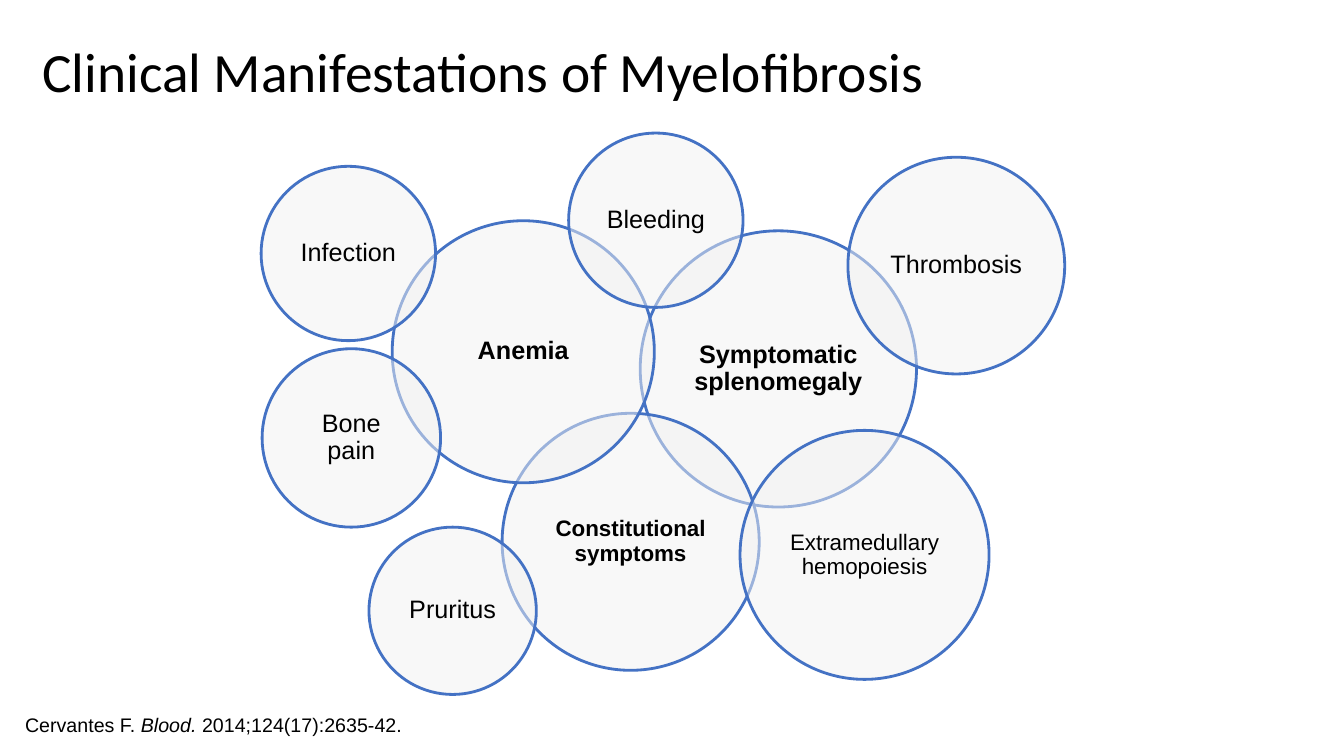
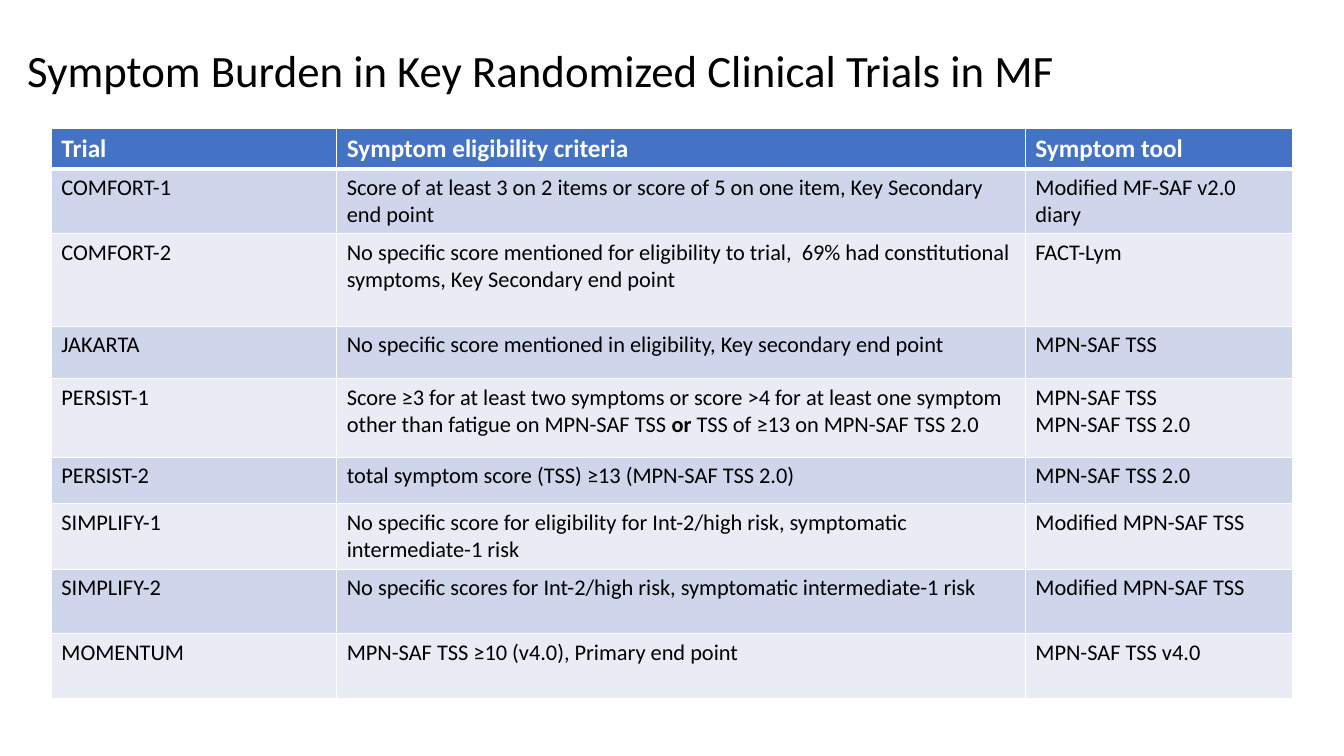
from lxml import etree
from pptx import Presentation
from pptx.dml.color import RGBColor
from pptx.enum import shapes, text
from pptx.oxml import ns
from pptx.util import Inches, Pt

BLACK = RGBColor(0x00, 0x00, 0x00)
WHITE = RGBColor(0xFF, 0xFF, 0xFF)
BLUE = RGBColor(0x44, 0x72, 0xC4)
LIGHT_GREY = RGBColor(0xF2, 0xF2, 0xF2)
ROW_FILLS = (RGBColor(0xCF, 0xD5, 0xEA), RGBColor(0xE9, 0xEB, 0xF5))
TITLE_FONT = TABLE_FONT = "Calibri"
DIAGRAM_FONT = "Arial"

# label, left, top, diameter, text size, bold; from back to front
SYMPTOMS = [
    ("Symptomatic splenomegaly", 6.35, 2.29, 2.74, 18, True),
    ("Constitutional symptoms", 4.98, 4.1, 2.55, 16, True),
    ("Anemia", 3.89, 2.19, 2.6, 18, True),
    ("Thrombosis", 8.41, 1.56, 2.15, 18, False),
    ("Bleeding", 5.64, 1.32, 1.73, 18, False),
    ("Infection", 2.59, 1.65, 1.73, 18, False),
    ("Bone pain", 2.6, 3.46, 1.77, 18, False),
    ("Pruritus", 3.66, 5.23, 1.66, 18, False),
    ("Extramedullary hemopoiesis", 7.34, 4.27, 2.47, 16, False),
]

COLUMN_WIDTHS = (2.83, 6.83, 2.65)
ROW_HEIGHTS = (0.4, 0.64, 0.92, 0.52, 0.78, 0.46, 0.65, 0.64, 0.64)
PERSIST_CRITERIA = (
    "Score ≥3 for at least two symptoms or score >4 for at least one symptom "
    "other than fatigue on MPN-SAF TSS **or** TSS of ≥13 on MPN-SAF TSS 2.0"
)
# Bold words stand between double asterisks.
TRIALS = [
    ("Trial", "Symptom eligibility criteria", "Symptom tool"),
    ("COMFORT-1",
     "Score of at least 3 on 2 items or score of 5 on one item, Key Secondary end point",
     "Modified MF-SAF v2.0 diary"),
    ("COMFORT-2",
     "No specific score mentioned for eligibility to trial,  69% had constitutional "
     "symptoms, Key Secondary end point",
     "FACT-Lym"),
    ("JAKARTA",
     "No specific score mentioned in eligibility, Key secondary end point",
     "MPN-SAF TSS"),
    ("PERSIST-1", PERSIST_CRITERIA, "MPN-SAF TSS\nMPN-SAF TSS 2.0"),
    ("PERSIST-2", "total symptom score (TSS) ≥13 (MPN-SAF TSS 2.0)", "MPN-SAF TSS 2.0"),
    ("SIMPLIFY-1",
     "No specific score for eligibility for Int-2/high risk, symptomatic intermediate-1 risk",
     "Modified MPN-SAF TSS"),
    ("SIMPLIFY-2",
     "No specific scores for Int-2/high risk, symptomatic intermediate-1 risk",
     "Modified MPN-SAF TSS"),
    ("MOMENTUM", "MPN-SAF TSS ≥10 (v4.0), Primary end point", "MPN-SAF TSS v4.0"),
]


def set_font(paragraph, name, size, color=BLACK, bold=None):
    font = paragraph.font
    font.name = name
    font.size = Pt(size)
    font.bold = bold
    font.color.rgb = color


def add_titled_slide(presentation, title_text, left, top, height, size):
    slide = presentation.slides.add_slide(presentation.slide_layouts[5])
    title = slide.shapes.title
    title.left, title.top = Inches(left), Inches(top)
    title.width, title.height = Inches(11.5), Inches(height)
    frame = title.text_frame
    frame.text = title_text
    frame.auto_size = text.MSO_AUTO_SIZE.NONE
    frame.vertical_anchor = text.MSO_ANCHOR.MIDDLE
    paragraph = frame.paragraphs[0]
    paragraph.alignment = text.PP_ALIGN.LEFT
    paragraph.line_spacing = 0.9
    set_font(paragraph, TITLE_FONT, size)
    return slide


def add_circle(slide, label, left, top, diameter, size, bold):
    circle = slide.shapes.add_shape(
        shapes.MSO_SHAPE.OVAL, Inches(left), Inches(top), Inches(diameter), Inches(diameter))
    circle.shadow.inherit = False
    circle.fill.solid()
    circle.fill.fore_color.rgb = LIGHT_GREY
    color = circle.fill._xPr.find(".//" + ns.qn("a:srgbClr"))
    etree.SubElement(color, ns.qn("a:alpha"), val="50000")
    circle.line.color.rgb = BLUE
    circle.line.width = Pt(2)
    frame = circle.text_frame
    frame.text = label
    frame.word_wrap = True
    frame.margin_left = frame.margin_right = Inches(0.09)
    frame.vertical_anchor = text.MSO_ANCHOR.MIDDLE
    paragraph = frame.paragraphs[0]
    paragraph.alignment = text.PP_ALIGN.CENTER
    paragraph.line_spacing = 0.9
    set_font(paragraph, DIAGRAM_FONT, size, bold=bold)


def add_citation(slide, authors, journal, reference):
    box = slide.shapes.add_textbox(Inches(0.15), Inches(7.02), Inches(4.08), Inches(0.34))
    box.text_frame.word_wrap = False
    paragraph = box.text_frame.paragraphs[0]
    set_font(paragraph, DIAGRAM_FONT, 14)
    for part in (authors, journal, reference):
        run = paragraph.add_run()
        run.text = part
        run.font.italic = part == journal or None


def set_borders(cell, top, bottom):
    """Draw white borders; top and bottom are widths in points."""
    properties = cell._tc.get_or_add_tcPr()
    for side, width in (("L", 1), ("R", 1), ("T", top), ("B", bottom)):
        line = etree.SubElement(properties, ns.qn(f"a:ln{side}"), w=str(Pt(width)))
        fill = etree.SubElement(line, ns.qn("a:solidFill"))
        etree.SubElement(fill, ns.qn("a:srgbClr"), val=str(WHITE))


def fill_cell(cell, content, row_index):
    is_header = row_index == 0
    set_borders(cell, top=3 if row_index == 1 else 1, bottom=3 if is_header else 1)
    cell.fill.solid()
    cell.fill.fore_color.rgb = BLUE if is_header else ROW_FILLS[(row_index - 1) % 2]
    frame = cell.text_frame
    for line_index, line in enumerate(content.split("\n")):
        paragraph = frame.add_paragraph() if line_index else frame.paragraphs[0]
        set_font(paragraph, TABLE_FONT, 18 if is_header else 16,
                 WHITE if is_header else BLACK, is_header)
        for part_index, part in enumerate(line.split("**")):
            run = paragraph.add_run()
            run.text = part
            if part_index % 2:
                run.font.bold = True


def add_trial_table(slide):
    table = slide.shapes.add_table(
        len(TRIALS), len(COLUMN_WIDTHS), Inches(0.51), Inches(1.27),
        Inches(sum(COLUMN_WIDTHS)), Inches(sum(ROW_HEIGHTS))).table
    for column, width in zip(table.columns, COLUMN_WIDTHS):
        column.width = Inches(width)
    for row_index, (row, height) in enumerate(zip(table.rows, ROW_HEIGHTS)):
        row.height = Inches(height)
        for cell, content in zip(row.cells, TRIALS[row_index]):
            fill_cell(cell, content, row_index)


def main():
    presentation = Presentation()
    presentation.slide_width = Inches(13.33)
    presentation.slide_height = Inches(7.5)

    slide = add_titled_slide(
        presentation, "Clinical Manifestations of Myelofibrosis", 0.32, 0.36, 0.76, 39.6)
    add_citation(slide, "Cervantes F. ", "Blood. ", "2014;124(17):2635-42.")
    for symptom in SYMPTOMS:
        add_circle(slide, *symptom)

    slide = add_titled_slide(
        presentation, "Symptom Burden in Key Randomized Clinical Trials in MF", 0.17, 0, 1.45, 32)
    add_trial_table(slide)

    presentation.save("out.pptx")


if __name__ == "__main__":
    main()
